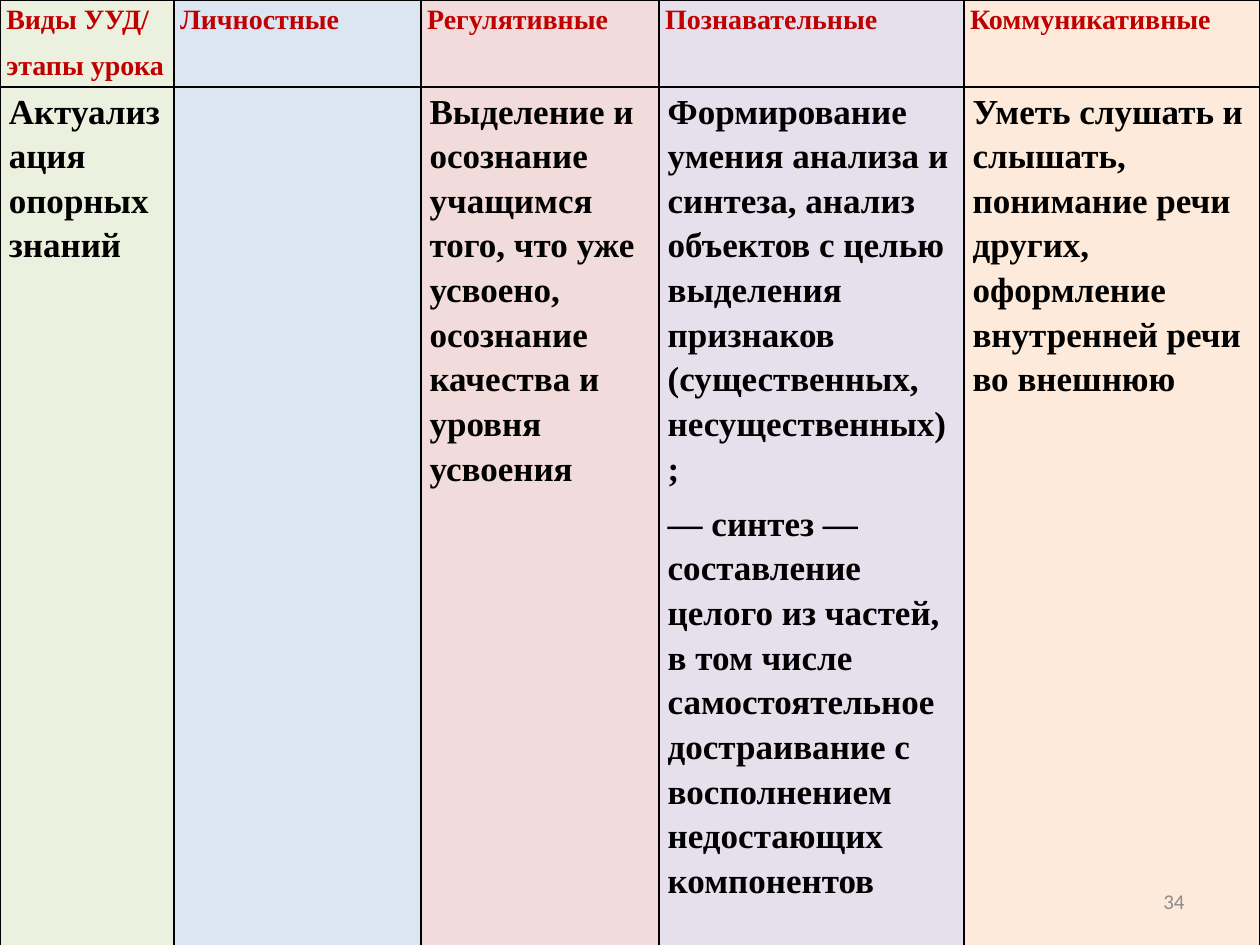
from lxml import etree
from pptx import Presentation
from pptx.dml.color import RGBColor
from pptx.enum.text import MSO_ANCHOR, PP_ALIGN
from pptx.oxml.ns import qn
from pptx.util import Inches, Pt

RIGHT = PP_ALIGN.RIGHT
MIDDLE = MSO_ANCHOR.MIDDLE

SLIDE_W, SLIDE_H = 10, 7.5
COLUMN_WIDTHS = [1.38, 1.96, 1.89, 2.42, 2.35]
ROW_HEIGHTS = [0.69, 6.99]
COLUMN_FILLS = ["EBF1DE", "DCE6F2", "F2DCDB", "E6E0EC", "FDEADA"]

HEADINGS = [
    ["Виды УУД/", "этапы урока"],
    ["Личностные"],
    ["Регулятивные"],
    ["Познавательные"],
    ["Коммуникативные"],
]
ACTIONS = [
    ["Актуализация опорных знаний"],
    [],
    ["Выделение и осознание учащимся того, что уже усвоено, "
     "осознание качества и уровня усвоения"],
    ["Формирование умения анализа и синтеза, анализ объектов с целью "
     "выделения признаков (существенных, несущественных);",
     "— синтез — составление целого из частей, в том числе самостоятельное "
     "достраивание с восполнением недостающих компонентов"],
    ["Уметь слушать и слышать, понимание речи других, "
     "оформление внутренней речи во внешнюю"],
]
# texts, font size, colour, side margin
ROWS = [(HEADINGS, 16, "C00000", 0.05), (ACTIONS, 20, "000000", 0.07)]


def rgb(value):
    return RGBColor.from_string(value)


def add_run(p, text, font, size, color, bold=False):
    r = p.add_run()
    r.text = text
    r.font.name = font
    r.font.size = Pt(size)
    r.font.bold = bold
    r.font.color.rgb = rgb(color)


def set_borders(cell, color, width):
    tc_pr = cell._tc.get_or_add_tcPr()
    for side in ("a:lnL", "a:lnR", "a:lnT", "a:lnB"):
        line = etree.SubElement(tc_pr, qn(side), w=str(Pt(width)))
        fill = etree.SubElement(line, qn("a:solidFill"))
        etree.SubElement(fill, qn("a:srgbClr"), val=color)


def fill_cell(cell, texts, size, color, margin, background):
    set_borders(cell, "000000", 1)
    cell.fill.solid()
    cell.fill.fore_color.rgb = rgb(background)
    cell.margin_left = cell.margin_right = Inches(margin)
    cell.margin_top = cell.margin_bottom = 0
    tf = cell.text_frame
    for i, text in enumerate(texts):
        p = tf.add_paragraph() if i else tf.paragraphs[0]
        p.line_spacing = 1.15
        if i:
            p.space_before = Pt(6)
        add_run(p, text, "Times New Roman", size, color, bold=True)


def add_stage_table(s, left, top):
    frame = s.shapes.add_table(
        len(ROW_HEIGHTS), len(COLUMN_WIDTHS), Inches(left), Inches(top),
        Inches(sum(COLUMN_WIDTHS)), Inches(sum(ROW_HEIGHTS)))
    table = frame.table
    table.horz_banding = False
    for column, width in zip(table.columns, COLUMN_WIDTHS):
        column.width = Inches(width)
    for row, height, (texts, size, color, margin) in zip(
            table.rows, ROW_HEIGHTS, ROWS):
        row.height = Inches(height)
        for cell, cell_texts, background in zip(row.cells, texts, COLUMN_FILLS):
            fill_cell(cell, cell_texts, size, color, margin, background)


def add_page_number(s, number, left, top, width, height):
    sp = s.shapes.add_textbox(
        Inches(left), Inches(top), Inches(width), Inches(height))
    tf = sp.text_frame
    tf.word_wrap = True
    tf.vertical_anchor = MIDDLE
    p = tf.paragraphs[0]
    p.alignment = RIGHT
    add_run(p, number, "Calibri", 12, "8C8C8C")


def main():
    prs = Presentation()
    prs.slide_width, prs.slide_height = Inches(SLIDE_W), Inches(SLIDE_H)
    s = prs.slides.add_slide(prs.slide_layouts[6])
    add_stage_table(s, 0, 0)
    add_page_number(s, "34", 7.17, 6.95, 2.33, 0.4)
    prs.save("out.pptx")


if __name__ == "__main__":
    main()
